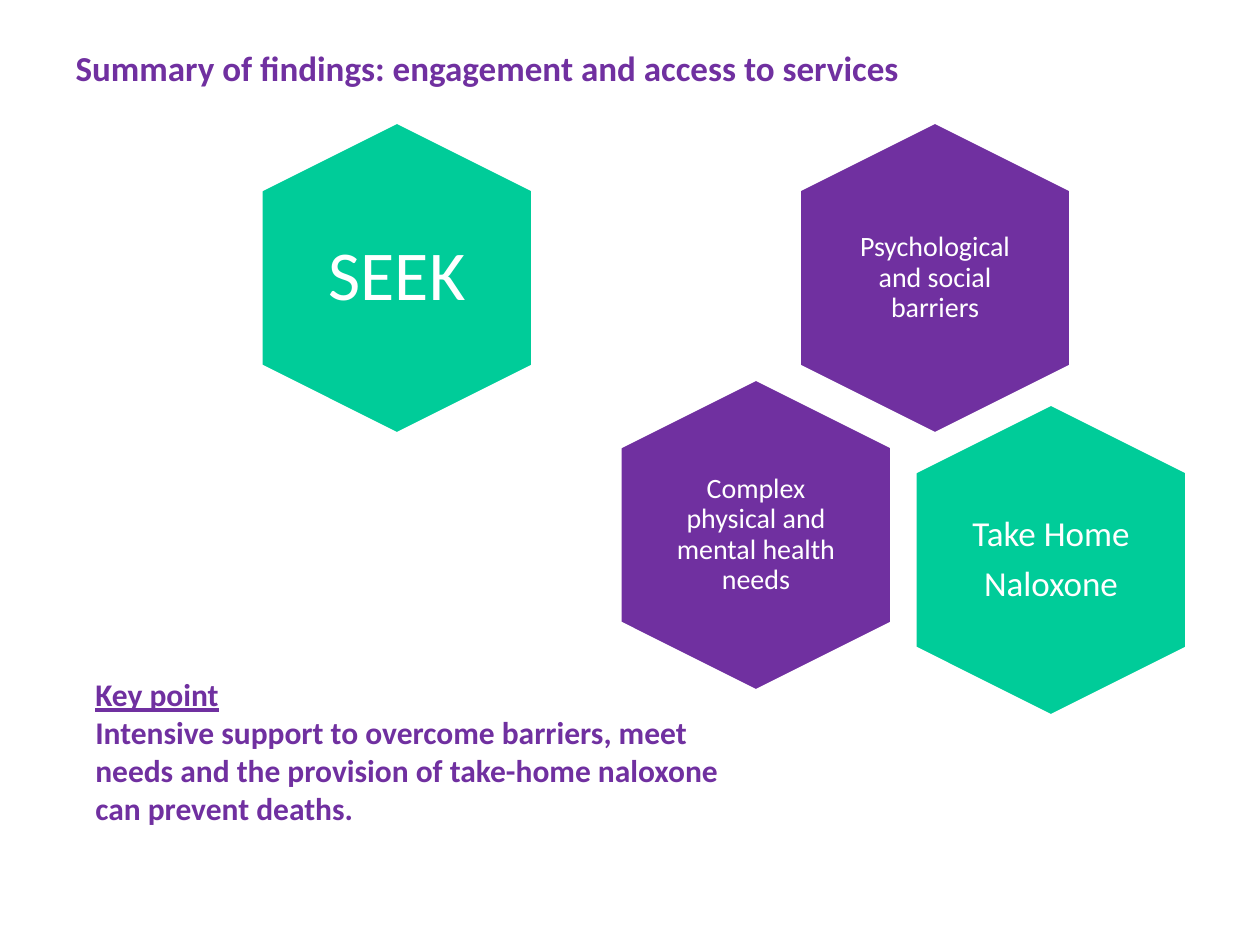
import pptx
import pptx.util
import pptx.dml.color
import pptx.enum.text

PX = 914400 // 126
PURPLE, GREEN, WHITE = "7030A0", "00CC99", "FFFFFF"
FONT = "Calibri"

TITLE = "Summary of findings: engagement and access to services"
TITLE_BOX = (63, 26, 893, 69)
HEXAGONS = [
    (799, 122, PURPLE, 16, (50, 57), ["Psychological and social barriers"]),
    (261, 122, GREEN, 40, (43, 49), ["SEEK"]),
    (620, 379, PURPLE, 16, (50, 57), ["Complex physical and mental health needs"]),
    (915, 404, GREEN, 20, (43, 49), ["Take Home", "Naloxone"]),
]
HEX_WIDTH, HEX_HEIGHT, HEX_SHOULDER = 272, 312, 68
KEY_POINT = [
    ("Key point", True),
    ("Intensive support to overcome barriers, meet needs and the provision "
     "of take-home naloxone can prevent deaths.", False),
]
KEY_POINT_BOX = (83, 669, 659, 165)


def emu(*lengths):
    return [pptx.util.Emu(length * PX) for length in lengths]


def rgb(colour):
    return pptx.dml.color.RGBColor.from_string(colour)


def add_run(paragraph, text, size, colour, bold=False, underline=False):
    run = paragraph.add_run()
    run.text = text
    run.font.name = FONT
    run.font.size = pptx.util.Pt(size)
    run.font.bold = bold
    run.font.underline = underline
    run.font.color.rgb = rgb(colour)


def paragraphs(frame, count):
    for _ in range(count - 1):
        frame.add_paragraph()
    return frame.paragraphs


def add_hexagon(slide, left, top, colour, size, insets, lines):
    middle, right = left + HEX_WIDTH // 2, left + HEX_WIDTH
    bottom = top + HEX_HEIGHT
    upper, lower = top + HEX_SHOULDER, bottom - HEX_SHOULDER
    outline = slide.shapes.build_freeform(middle, top, scale=PX)
    outline.add_line_segments(
        [(right, upper), (right, lower), (middle, bottom), (left, lower), (left, upper)]
    )
    hexagon = outline.convert_to_shape()
    hexagon.shadow.inherit = False
    hexagon.fill.solid()
    hexagon.fill.fore_color.rgb = rgb(colour)
    hexagon.line.color.rgb = rgb(WHITE)
    hexagon.line.width = pptx.util.Pt(2)
    frame = hexagon.text_frame
    frame.word_wrap = True
    frame.vertical_anchor = pptx.enum.text.MSO_ANCHOR.MIDDLE
    side, end = emu(*insets)
    frame.margin_left = frame.margin_right = side
    frame.margin_top = frame.margin_bottom = end
    for paragraph, line in zip(paragraphs(frame, len(lines)), lines):
        paragraph.alignment = pptx.enum.text.PP_ALIGN.CENTER
        paragraph.line_spacing = 0.9
        paragraph.space_after = pptx.util.Pt(round(size * 0.35, 1))
        add_run(paragraph, line, size, WHITE)


def main():
    deck = pptx.Presentation()
    deck.slide_width, deck.slide_height = emu(1260, 945)
    slide = deck.slides.add_slide(deck.slide_layouts[5])

    title = slide.shapes.title
    title.left, title.top, title.width, title.height = emu(*TITLE_BOX)
    heading = title.text_frame
    heading.word_wrap = True
    heading.auto_size = pptx.enum.text.MSO_AUTO_SIZE.NONE
    heading.vertical_anchor = pptx.enum.text.MSO_ANCHOR.BOTTOM
    heading.paragraphs[0].alignment = pptx.enum.text.PP_ALIGN.LEFT
    add_run(heading.paragraphs[0], TITLE, 20, PURPLE, bold=True)

    for hexagon in HEXAGONS:
        add_hexagon(slide, *hexagon)

    key_point = slide.shapes.add_textbox(*emu(*KEY_POINT_BOX)).text_frame
    key_point.word_wrap = True
    key_point.auto_size = pptx.enum.text.MSO_AUTO_SIZE.SHAPE_TO_FIT_TEXT
    for paragraph, (text, underline) in zip(paragraphs(key_point, len(KEY_POINT)), KEY_POINT):
        add_run(paragraph, text, 18, PURPLE, bold=True, underline=underline)

    deck.save("out.pptx")


if __name__ == "__main__":
    main()
